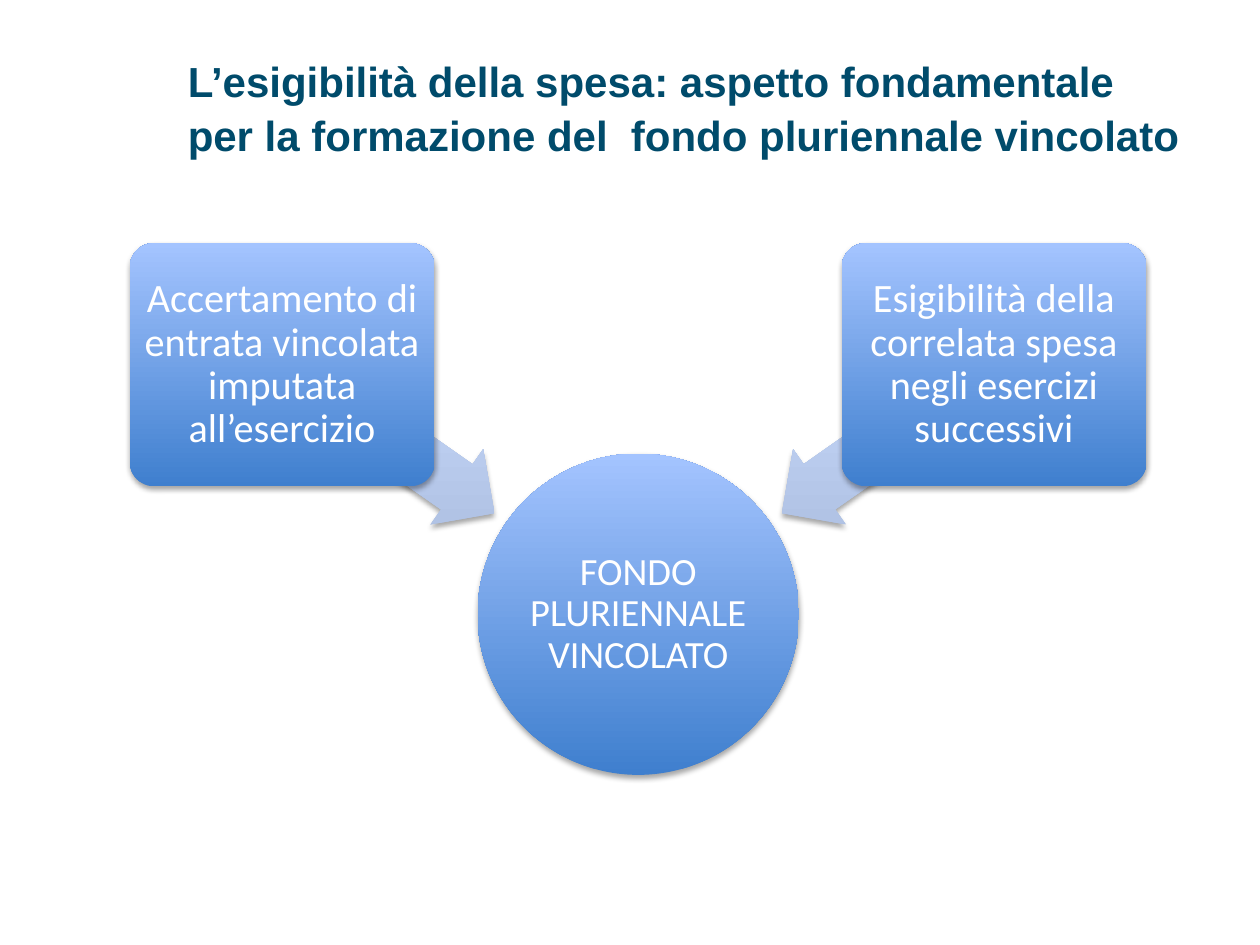
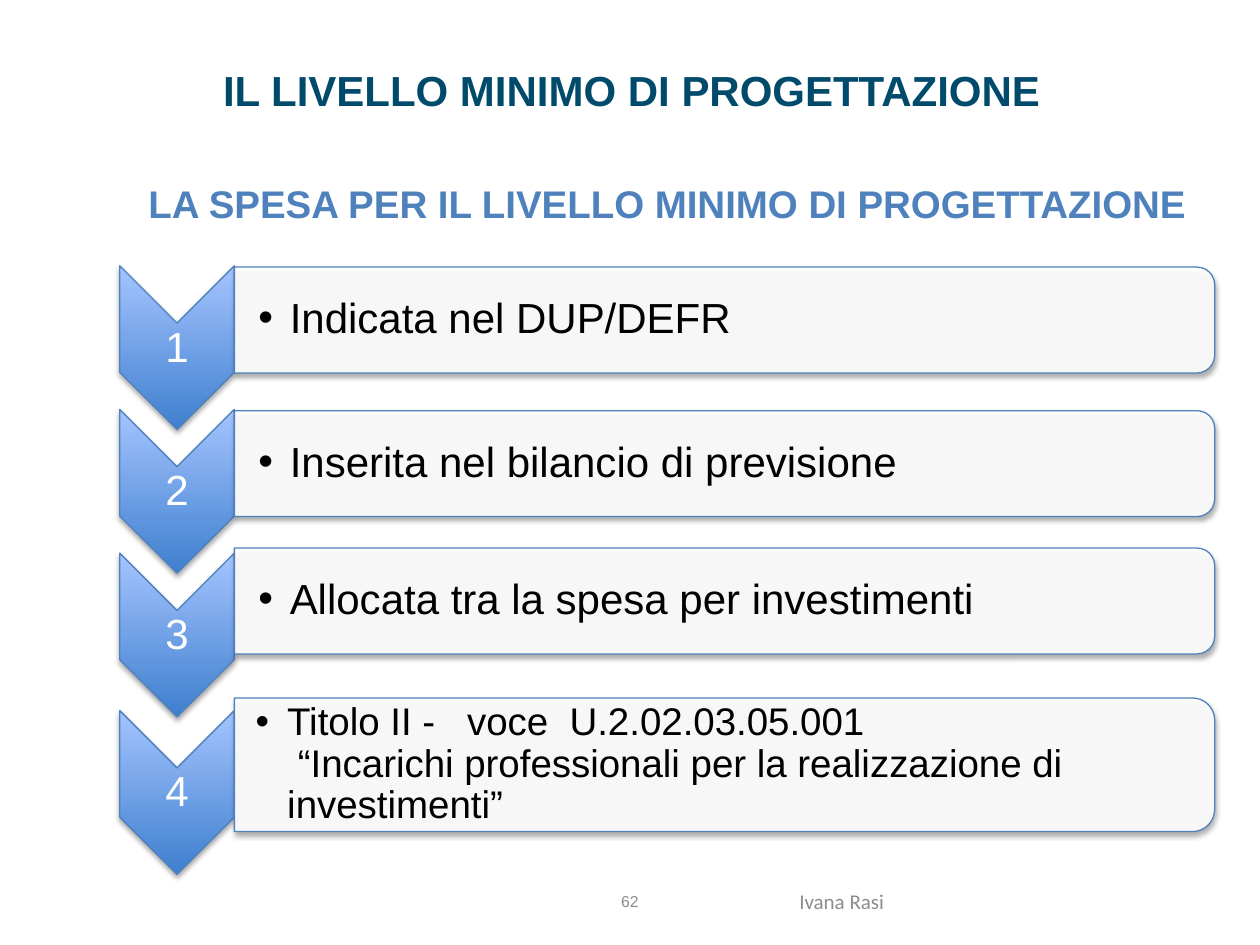
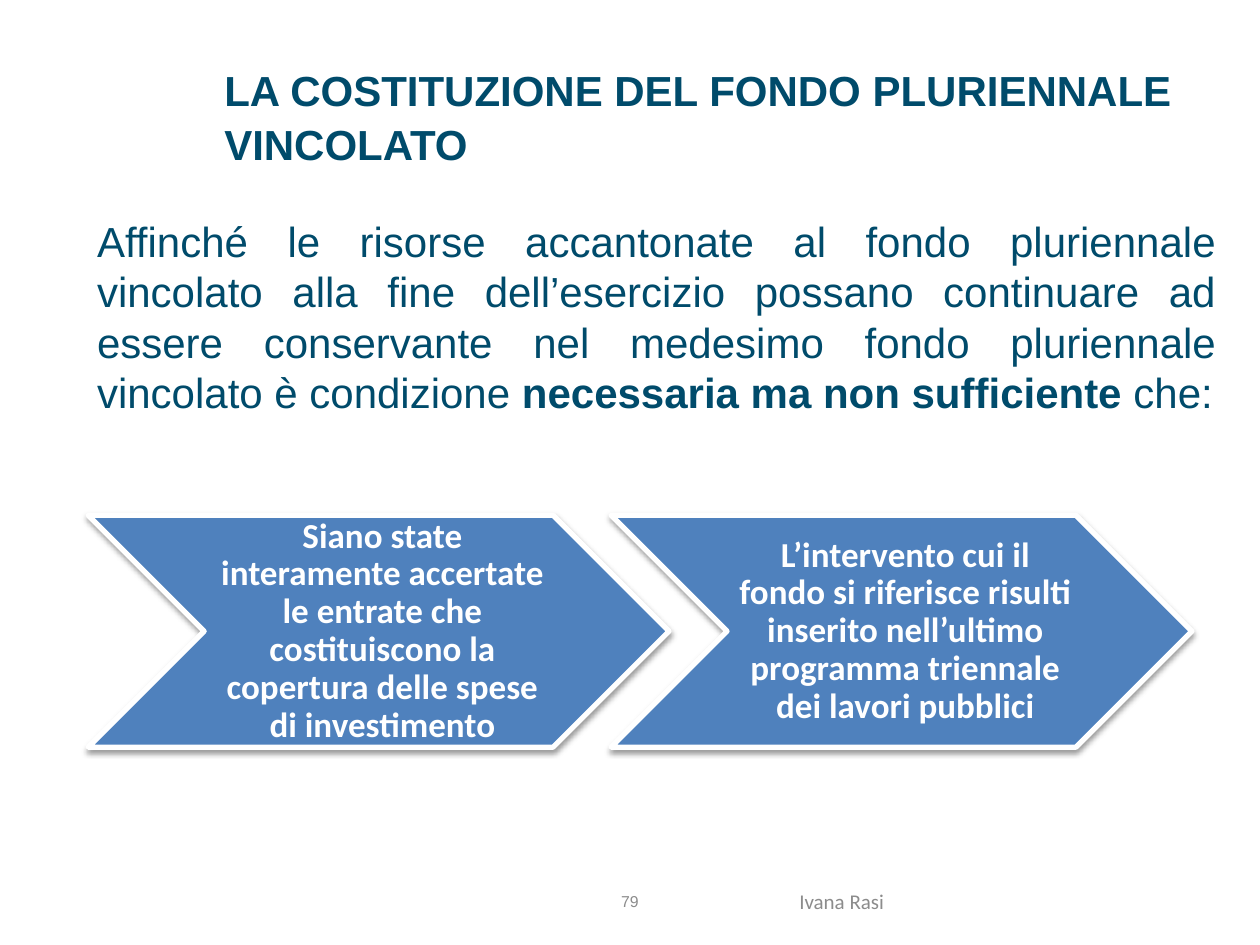
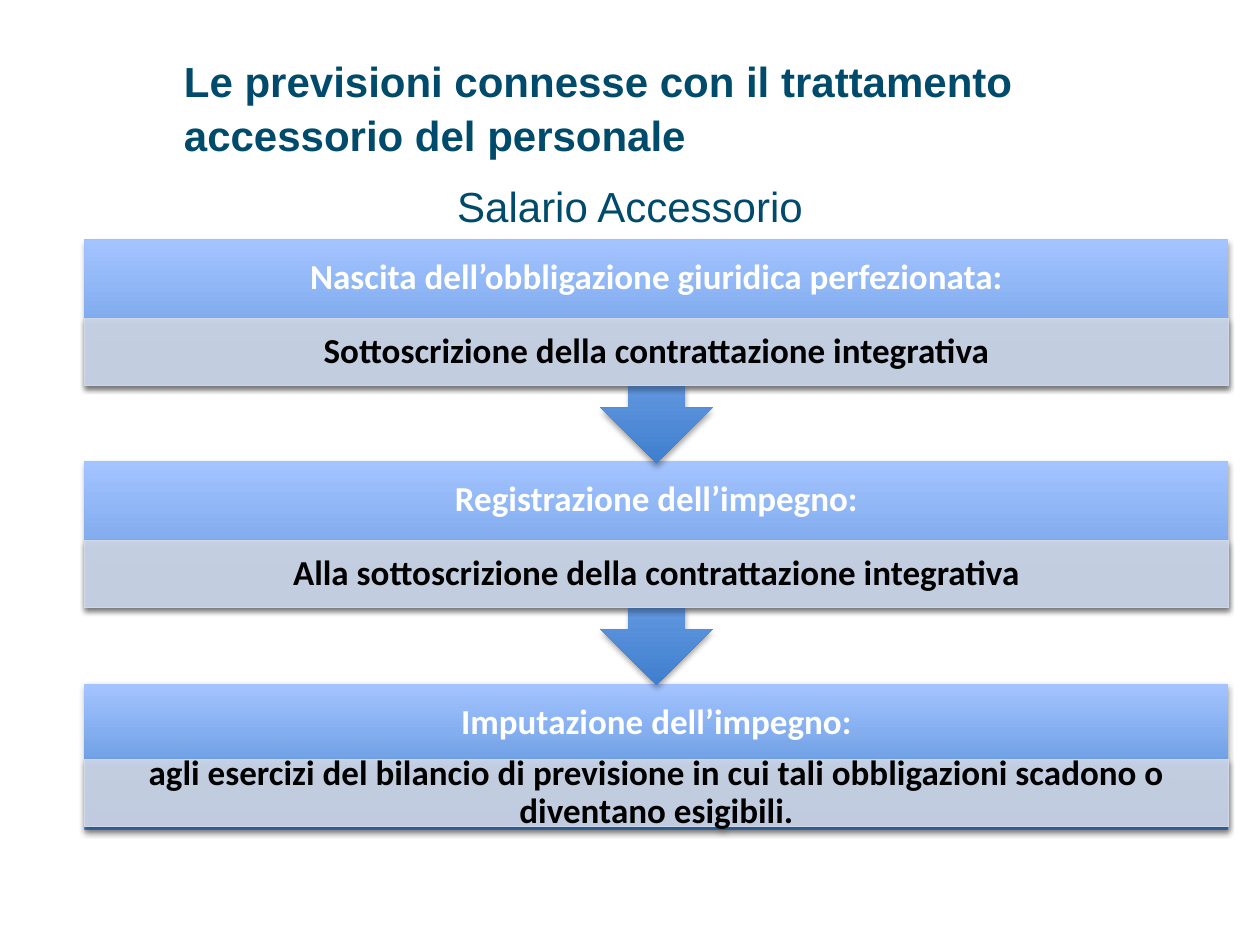
from lxml import etree
from pptx import Presentation
from pptx import util as u
from pptx.dml.color import RGBColor
from pptx.enum import shapes, text
from pptx.oxml import ns

COLORS = {
    "title": "004B6B",
    "accent": "4F81BD",
    "deep": "3F7FCE",
    "light": "A4C4FF",
    "arrow_deep": "ADBFE1",
    "arrow_light": "CCDDFF",
    "strip": "D0D8E8",
    "footer": "8C8C8C",
    "white": "FFFFFF",
    "black": "000000",
}
BLUE = ("deep", "light")
PALE_BLUE = ("arrow_deep", "arrow_light")
KIND = shapes.MSO_SHAPE
ALIGN = text.PP_ALIGN
ANCHOR = text.MSO_ANCHOR


def rgb(name):
    """Return the palette colour with this name."""
    return RGBColor.from_string(COLORS[name])


def add_xml(parent, tag, **attributes):
    """Append a drawing element and return it."""
    values = {key: str(value) for key, value in attributes.items()}
    return etree.SubElement(parent, ns.qn(tag), values)


def write(frame, content, *, size, color, font="Arial", bold=False,
          align=ALIGN.CENTER, anchor=ANCHOR.MIDDLE, spacing=None,
          insets=(0.1, 0.05, 0.1, 0.05), bullet=None, indent=0.0):
    """Fill a text frame with a string or a list of (text, bold) parts."""
    frame.auto_size = text.MSO_AUTO_SIZE.NONE
    frame.word_wrap = True
    frame.vertical_anchor = anchor
    frame.margin_left, frame.margin_top, frame.margin_right, frame.margin_bottom = (
        u.Inches(inset) for inset in insets)
    paragraph = frame.paragraphs[0]
    paragraph.alignment = align
    paragraph.space_before = u.Pt(0)
    if spacing:
        paragraph.line_spacing = spacing
    properties = paragraph._p.get_or_add_pPr()
    properties.set("marL", str(u.Inches(indent)))
    properties.set("indent", str(-u.Inches(indent)))
    if bullet:
        add_xml(properties, "a:buFont", typeface="Arial")
        add_xml(properties, "a:buChar", char=bullet)
    else:
        add_xml(properties, "a:buNone")
    if isinstance(content, str):
        paragraph.text = content
        weights = [bold] * len(paragraph.runs)
    else:
        for words, _ in content:
            paragraph.add_run().text = words
        weights = [weight for _, weight in content]
    for run, weight in zip(paragraph.runs, weights):
        run.font.name = font
        run.font.size = u.Pt(size)
        run.font.bold = weight
        run.font.color.rgb = rgb(color)


class Deck:
    """Hold the shared style and the slide being built."""

    def __init__(self):
        """Start an empty 4:3 presentation."""
        self.presentation = Presentation()
        self.presentation.slide_width = u.Inches(10)
        self.presentation.slide_height = u.Inches(7.5)
        self.slide = None

    def start(self, title, left, top, width, height, with_body=False):
        """Add a slide with its title."""
        layout = self.presentation.slide_layouts[1 if with_body else 5]
        self.slide = self.presentation.slides.add_slide(layout)
        heading = self.slide.shapes.title
        self.place(heading, left, top, width, height)
        write(heading.text_frame, title, size=24, color="title", bold=True,
              align=ALIGN.LEFT, anchor=ANCHOR.TOP, spacing=u.Pt(31))

    def place(self, item, left, top, width, height):
        """Set the position and size of a placeholder."""
        item.left, item.top = u.Inches(left), u.Inches(top)
        item.width, item.height = u.Inches(width), u.Inches(height)

    def body(self, content, left, top, align):
        """Fill the body placeholder."""
        body = self.slide.placeholders[1]
        self.place(body, left, top, 9.08, 5.17)
        write(body.text_frame, content, size=24, color="title",
              align=align, anchor=ANCHOR.TOP)

    def label(self, content, left, top, width, height, **style):
        """Add a text box."""
        box = self.slide.shapes.add_textbox(
            *map(u.Inches, (left, top, width, height)))
        write(box.text_frame, content, **style)

    def footer(self, number):
        """Add the page number and the author."""
        self.label(number, 4.35, 6.95, 1.3, 0.4, size=9, color="footer")
        self.label("Ivana Rasi", 5.94, 6.95, 1.48, 0.4, size=12,
                   color="footer", font="Calibri")

    def shape(self, kind, left, top, width, height, fill, line=None,
              line_width=0.75, rotation=0, opacity=None, adjust=(), shade=35):
        """Add a shadowed shape with a plain or (bottom, top) gradient fill."""
        item = self.slide.shapes.add_shape(
            kind, *map(u.Inches, (left, top, width, height)))
        item.rotation = rotation
        for index, value in enumerate(adjust):
            item.adjustments[index] = value
        self.paint(item, fill)
        if line:
            item.line.color.rgb = rgb(line)
            item.line.width = u.Pt(line_width)
        else:
            item.line.fill.background()
        if opacity:
            solid = item._element.spPr.find(ns.qn("a:solidFill"))
            add_xml(solid[0], "a:alpha", val=opacity * 1000)
        self.cast_shadow(item, shade)
        return item

    def paint(self, item, fill):
        """Apply one colour, or an upright gradient that ignores rotation."""
        if isinstance(fill, str):
            item.fill.solid()
            item.fill.fore_color.rgb = rgb(fill)
            return
        item.fill.gradient()
        item.fill.gradient_angle = 90
        for stop, name in zip(item.fill.gradient_stops, fill):
            stop.color.rgb = rgb(name)
        item._element.spPr.find(ns.qn("a:gradFill")).set("rotWithShape", "0")

    def cast_shadow(self, item, shade):
        """Give a shape a soft shadow below it."""
        item.shadow.inherit = False
        effects = item._element.spPr.find(ns.qn("a:effectLst"))
        shadow = add_xml(effects, "a:outerShdw", blurRad=u.Pt(3.1),
                         dist=u.Pt(1.8), dir=5400000, rotWithShape=0)
        tint = add_xml(shadow, "a:srgbClr", val=COLORS["black"])
        add_xml(tint, "a:alpha", val=shade * 1000)

    def upright(self, kind, left, top, width, height, **style):
        """Add a shape turned by 90 degrees that covers the given area."""
        shift = (width - height) / 2
        return self.shape(kind, left + shift, top - shift, height, width,
                          rotation=90, **style)


def build_enforceability(deck):
    """Show the two conditions that feed the fund."""
    deck.start("L’esigibilità della spesa: aspetto fondamentale per la "
               "formazione del  fondo pluriennale vincolato",
               1.39, 0.36, 8.15, 1.02)
    fund = deck.shape(KIND.OVAL, 3.79, 3.6, 2.55, 2.55, BLUE)
    write(fund.text_frame, "FONDO PLURIENNALE VINCOLATO", size=22,
          color="white", font="Calibri", spacing=0.9, insets=[0.02] * 4)
    conditions = [
        ("Accertamento di entrata vincolata imputata all’esercizio",
         1.03, 2.06, 215),
        ("Esigibilità della correlata spesa negli esercizi successivi",
         6.68, 6.02, 325),
    ]
    for words, left, arrow_left, angle in conditions:
        deck.shape(KIND.LEFT_ARROW, arrow_left, 3.12, 2.05, 0.73, PALE_BLUE,
                   rotation=angle, adjust=(0.6, 0.5))
        condition = deck.shape(KIND.ROUNDED_RECTANGLE, left, 1.93, 2.42, 1.93,
                               BLUE, adjust=(0.1,))
        write(condition.text_frame, words, size=23, color="white",
              font="Calibri", spacing=0.9, insets=[0.05] * 4)


def build_design_level(deck):
    """List the four steps for the minimum design level."""
    deck.start("IL LIVELLO MINIMO DI PROGETTAZIONE", 1.67, 0.43, 7.96, 0.96)
    deck.footer("62")
    steps = [
        ("Indicata nel DUP/DEFR", 2.11, 2.12, 0.84, 24, 0.19),
        ("Inserita nel bilancio di previsione", 3.25, 3.26, 0.84, 24, 0.19),
        ("Allocata tra la spesa per investimenti", 4.39, 4.35, 0.84, 24, 0.19),
        ("Titolo II -   voce  U.2.02.03.05.001\n “Incarichi professionali "
         "per la realizzazione di investimenti”", 5.64, 5.54, 1.06, 22, 0.17),
    ]
    for number, step in enumerate(steps, 1):
        words, marker_top, panel_top, panel_height, size, inset = step
        deck.upright(KIND.CHEVRON, 0.95, marker_top, 0.91, 1.3,
                     fill=BLUE, line="accent")
        deck.label(str(number), 0.95, marker_top + 0.46, 0.91, 0.39, size=24,
                   color="white", spacing=0.9, insets=[0.02] * 4)
        deck.upright(KIND.ROUND_2_SAME_RECTANGLE, 1.86, panel_top, 7.78,
                     panel_height, fill="white", line="accent", opacity=90)
        deck.label(words, 1.86, panel_top + 0.05, 7.74, panel_height - 0.1,
                   size=size, color="black", align=ALIGN.LEFT, spacing=0.9,
                   insets=(inset, 0.02, 0.02, 0.02), bullet="•", indent=0.25)
    deck.label("LA SPESA PER IL LIVELLO MINIMO DI PROGETTAZIONE",
               0.95, 1.38, 8.69, 0.47, size=22, color="accent", bold=True,
               anchor=ANCHOR.TOP)


def build_fund_setup(deck):
    """State the necessary conditions for keeping the fund."""
    deck.start("LA COSTITUZIONE DEL FONDO PLURIENNALE VINCOLATO",
               1.68, 0.43, 7.96, 0.96, with_body=True)
    deck.body([
        ("Affinché le risorse accantonate al fondo pluriennale vincolato alla "
         "fine dell’esercizio possano continuare ad essere conservante nel "
         "medesimo fondo pluriennale vincolato è condizione ", False),
        ("necessaria ma non sufficiente", True),
        (" che:", False),
    ], 0.67, 1.66, ALIGN.JUSTIFY)
    deck.footer("79")
    requirements = [
        "Siano state interamente accertate le entrate che costituiscono la "
        "copertura delle spese di investimento",
        "L’intervento cui il fondo si riferisce risulti inserito nell’ultimo "
        "programma triennale dei lavori pubblici",
    ]
    for index, words in enumerate(requirements):
        requirement = deck.shape(KIND.CHEVRON, 0.7 + index * 4.15, 4.09, 4.61,
                                 1.84, "accent", line="white", line_width=3,
                                 shade=38)
        write(requirement.text_frame, words, size=20, color="white",
              font="Calibri", bold=True, spacing=0.9,
              insets=(0.09, 0.03, 0.03, 0.03))


def build_extra_pay(deck):
    """Show the three phases of the accessory pay commitment."""
    deck.start("Le previsioni connesse con il trattamento accessorio del "
               "personale", 1.36, 0.36, 8.18, 1.02, with_body=True)
    deck.body("Salario Accessorio", 0.46, 1.38, ALIGN.CENTER)
    left, width = 0.67, 9.08
    phases = [
        ("Imputazione dell’impegno:",
         "agli esercizi del bilancio di previsione in cui tali obbligazioni "
         "scadono o diventano esigibili.", 5.43, 0.6),
        ("Registrazione dell’impegno:",
         "Alla sottoscrizione della contrattazione integrativa", 3.66, 0.63),
        ("Nascita dell’obbligazione giuridica perfezionata:",
         "Sottoscrizione della contrattazione integrativa", 1.9, 0.63),
    ]
    style = {"size": 20, "font": "Calibri", "bold": True, "spacing": 0.9}
    for index, (phase, detail, top, strip_offset) in enumerate(phases):
        if index == 0:
            deck.shape(KIND.RECTANGLE, left, top, width, 1.16, BLUE)
        else:
            deck.shape(KIND.UP_ARROW_CALLOUT, left, top, width, 1.78, BLUE,
                       rotation=180)
        deck.label(phase, left, top, width, 0.62, color="white",
                   insets=[0.16] * 4, **style)
        strip = deck.shape(KIND.RECTANGLE, left, top + strip_offset, width,
                           0.53, "strip", line="strip", opacity=90)
        write(strip.text_frame, detail, color="black",
              insets=(0.16, 0.03, 0.16, 0.03), **style)


def main():
    """Build the four slides and save them."""
    deck = Deck()
    build_enforceability(deck)
    build_design_level(deck)
    build_fund_setup(deck)
    build_extra_pay(deck)
    deck.presentation.save("out.pptx")


if __name__ == "__main__":
    main()
